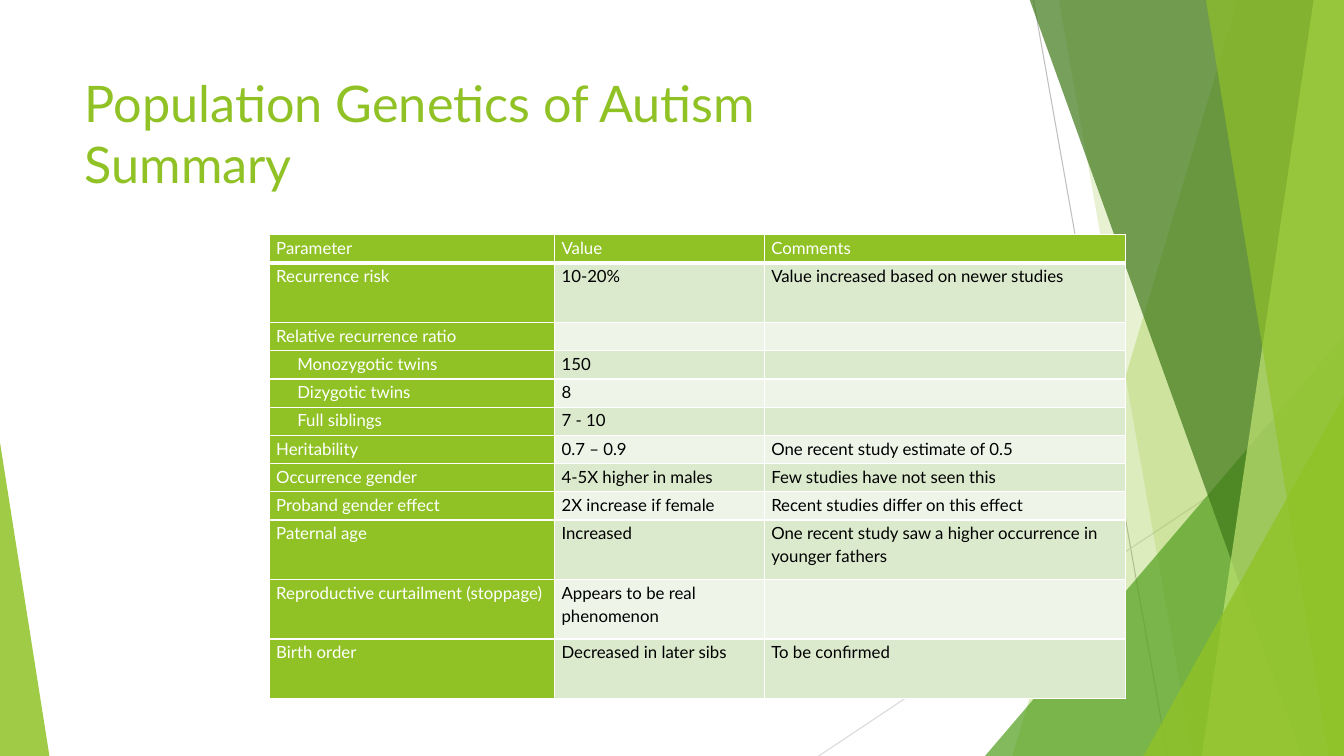
from dataclasses import dataclass
from typing import Any

from lxml import etree
from pptx import Presentation
from pptx import util as u
from pptx.dml.color import RGBColor
from pptx.enum import shapes, text
from pptx.oxml.ns import qn


@dataclass(frozen=True)
class Theme:
    font: str = "Lato"
    head: float = 36
    body: float = 12
    lime: str = "90C226"
    leaf: str = "54A021"
    moss: str = "3F7819"
    pale: str = "C0E474"
    tint: str = "DBE9CD"
    mist: str = "EEF4E8"
    white: str = "FFFFFF"
    black: str = "000000"
    gray: str = "BFBFBF"
    ash: str = "D9D9D9"


@dataclass(frozen=True)
class Ray:
    start: tuple[float, float]
    end: tuple[float, float]
    color: str


@dataclass(frozen=True)
class Band:
    top: float
    foot: float
    color: str
    alpha: int


@dataclass(frozen=True)
class Wedge:
    left: float
    top: float
    width: float
    peak: float
    color: str
    alpha: int


@dataclass(frozen=True)
class Entry:
    label: str
    value: str = ""
    note: str = ""
    height: float = 0.28
    indent: float = 0


THEME = Theme()
WIDE, HIGH = 13.33, 7.5
EDGE = -0.01
TALL = 0.59
STEP = 0.21

RAYS = [
    Ray((10.25, 0), (11.58, HIGH), THEME.gray),
    Ray((WIDE, 4.03), (8.12, HIGH), THEME.ash),
]
FACETS = [
    Band(12.28, 10.04, THEME.lime, 30),
    Band(10.5, 11.83, THEME.lime, 20),
    Wedge(9.77, 3.33, 3.56, 1, THEME.leaf, 72),
    Band(10.21, 12.91, THEME.moss, 70),
    Band(13.03, 11.92, THEME.pale, 70),
    Band(11.96, 13.18, THEME.lime, 65),
    Wedge(11.34, 3.93, 1.99, 1, THEME.lime, 80),
    Wedge(0, 4.39, 0.49, 0, THEME.lime, 85),
]
COLS = [2.83, 2.08, 3.58]
ROWS = [
    Entry("Parameter", "Value", "Comments"),
    Entry("Recurrence risk", "10-20%", "Value increased based on newer studies", TALL),
    Entry("Relative recurrence ratio"),
    Entry("Monozygotic twins", "150", indent=STEP),
    Entry("Dizygotic twins", "8", indent=STEP),
    Entry("Full siblings", "7 - 10", indent=STEP),
    Entry("Heritability", "0.7 – 0.9", "One recent study estimate of 0.5"),
    Entry("Occurrence gender", "4-5X higher in males", "Few studies have not seen this"),
    Entry("Proband gender effect", "2X increase if female", "Recent studies differ on this effect"),
    Entry("Paternal age", "Increased", "One recent study saw a higher occurrence in younger fathers", TALL),
    Entry("Reproductive curtailment (stoppage)", "Appears to be real phenomenon", height=TALL),
    Entry("Birth order", "Decreased in later sibs", "To be confirmed", TALL),
]


def apply(item: Any, form: dict[str, Any]) -> None:
    for name, value in form.items():
        setattr(item, name, value)


def paint(fill: Any, color: str) -> None:
    fill.solid()
    fill.fore_color.rgb = RGBColor.from_string(color)


def style(font: Any, size: float, color: str) -> None:
    apply(font, {"name": THEME.font, "size": u.Pt(size), "bold": False})
    font.color.rgb = RGBColor.from_string(color)


def draw_ray(slide: Any, ray: Ray) -> None:
    ends = [u.Inches(n) for n in ray.start + ray.end]
    line = slide.shapes.add_connector(shapes.MSO_CONNECTOR.STRAIGHT, *ends)
    line.line.width = u.Pt(0.75)
    line.line.color.rgb = RGBColor.from_string(ray.color)
    etree.SubElement(line._element.spPr, qn("a:effectLst"))


def draw_facet(slide: Any, facet: Band | Wedge) -> None:
    if isinstance(facet, Band):
        points = [(WIDE, EDGE), (WIDE, HIGH), (facet.foot, HIGH)]
        pen = slide.shapes.build_freeform(u.Inches(facet.top), u.Inches(EDGE))
        pen.add_line_segments([(u.Inches(x), u.Inches(y)) for x, y in points])
        shape = pen.convert_to_shape()
    else:
        box = (facet.left, facet.top, facet.width, HIGH - facet.top)
        shape = slide.shapes.add_shape(
            shapes.MSO_SHAPE.ISOSCELES_TRIANGLE, *[u.Inches(n) for n in box]
        )
        shape.adjustments[0] = facet.peak
    shape.shadow.inherit = False
    shape.line.fill.background()
    paint(shape.fill, facet.color)
    tone = shape._element.spPr.find(".//" + qn("a:srgbClr"))
    etree.SubElement(tone, qn("a:alpha"), val=str(facet.alpha * 1000))


def draw_title(slide: Any, words: str) -> None:
    title = slide.shapes.title
    apply(title, {"left": u.Inches(0.74), "top": u.Inches(0.67),
                  "width": u.Inches(9.4), "height": u.Inches(1.44)})
    frame = title.text_frame
    apply(frame, {"text": words, "word_wrap": True,
                  "auto_size": text.MSO_AUTO_SIZE.NONE,
                  "vertical_anchor": text.MSO_ANCHOR.TOP})
    part = frame.paragraphs[0]
    part.alignment = text.PP_ALIGN.LEFT
    for run in part.runs:
        style(run.font, THEME.head, THEME.lime)
    slide.shapes._spTree.append(title._element)


def edge_cell(cell: Any, base: float) -> None:
    props = cell._tc.get_or_add_tcPr()
    for place, side in enumerate("LRTB"):
        width = u.Pt(base if side == "B" else 1)
        line = etree.Element(qn(f"a:ln{side}"), w=str(width))
        fill = etree.SubElement(line, qn("a:solidFill"))
        etree.SubElement(fill, qn("a:srgbClr"), val=THEME.white)
        props.insert(place, line)


def fill_cell(cell: Any, words: str, back: str, ink: str, indent: float) -> None:
    apply(cell, {"margin_left": u.Inches(0.07), "margin_right": u.Inches(0.07),
                 "margin_top": 0, "margin_bottom": 0})
    paint(cell.fill, back)
    part = cell.text_frame.paragraphs[0]
    part.line_spacing = 1.15
    if indent:
        part._p.get_or_add_pPr().set("marL", str(u.Inches(indent)))
    if words:
        run = part.add_run()
        run.text = words
        style(run.font, THEME.body, ink)
    else:
        etree.SubElement(part._p, qn("a:endParaRPr"), sz=str(int(THEME.body * 100)))


def draw_table(slide: Any) -> None:
    box = (2.67, 2.33, sum(COLS), sum(row.height for row in ROWS))
    table = slide.shapes.add_table(
        len(ROWS), len(COLS), *[u.Inches(n) for n in box]
    ).table
    for col, width in zip(table.columns, COLS):
        col.width = u.Inches(width)
    for r, row in enumerate(ROWS):
        table.rows[r].height = u.Inches(row.height)
        for c, words in enumerate((row.label, row.value, row.note)):
            lead = r == 0 or c == 0
            back = THEME.lime if lead else THEME.tint if r % 2 else THEME.mist
            ink = THEME.white if lead else THEME.black
            cell = table.cell(r, c)
            fill_cell(cell, words, back, ink, 0 if c else row.indent)
            edge_cell(cell, 1 if r else 3)


def main() -> None:
    deck = Presentation()
    apply(deck, {"slide_width": u.Inches(WIDE), "slide_height": u.Inches(HIGH)})
    slide = deck.slides.add_slide(deck.slide_layouts[5])
    paint(slide.background.fill, THEME.white)
    for ray in RAYS:
        draw_ray(slide, ray)
    for facet in FACETS:
        draw_facet(slide, facet)
    draw_title(slide, "Population Genetics of Autism\vSummary")
    draw_table(slide)
    deck.save("out.pptx")


if __name__ == "__main__":
    main()
